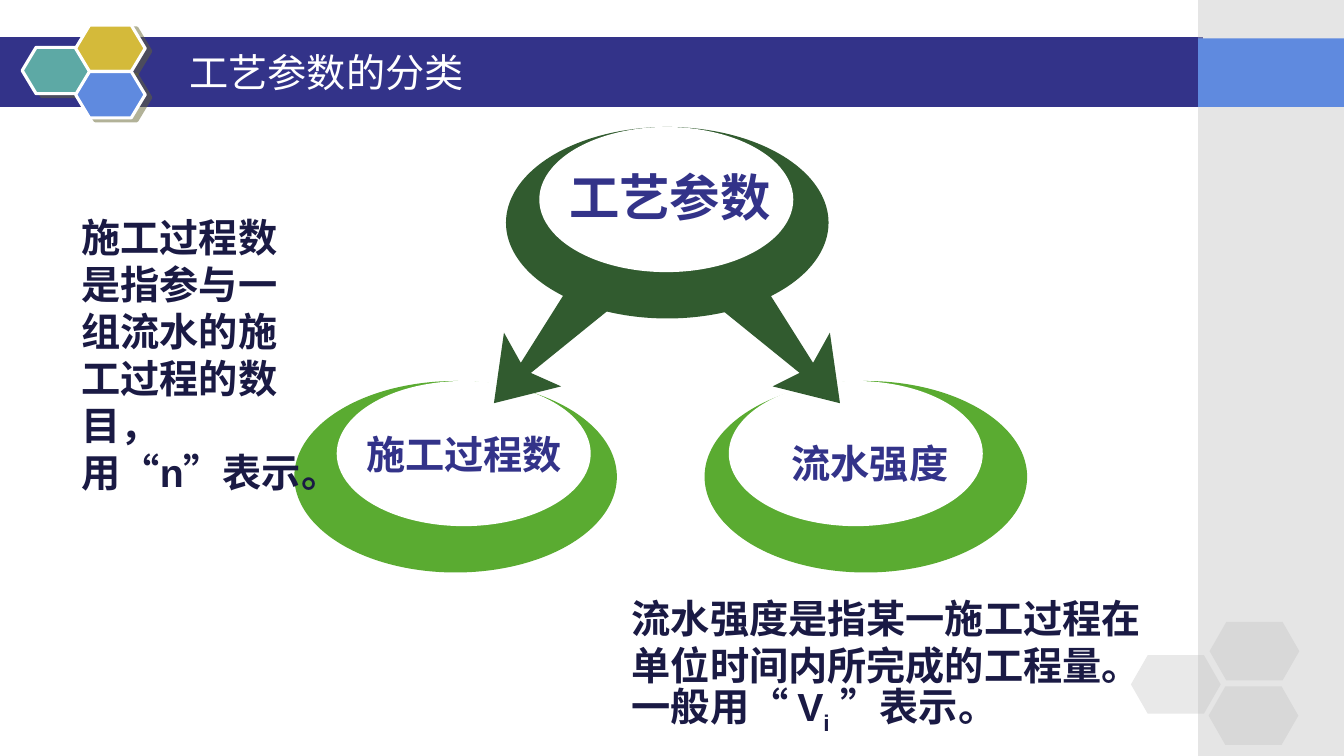
from lxml.etree import SubElement
from pptx import Presentation
from pptx.dml.color import RGBColor
from pptx.enum.shapes import MSO_SHAPE
from pptx.enum.text import MSO_ANCHOR, MSO_AUTO_SIZE, PP_ALIGN
from pptx.oxml import parse_xml
from pptx.oxml.ns import nsdecls, qn
from pptx.util import Emu, Pt

COLS, ROWS = 400, 225
CELL = 30480

WHITE = RGBColor(0xFF, 0xFF, 0xFF)
NAVY = RGBColor(0x33, 0x33, 0x89)
INK = RGBColor(0x1A, 0x1A, 0x44)
BLUE = RGBColor(0x5F, 0x8A, 0xDF)
TEAL = RGBColor(0x5D, 0xA9, 0xA5)
GOLD = RGBColor(0xD4, 0xBA, 0x3A)
GRAY = RGBColor(0xC0, 0xC0, 0xC0)
GREEN = RGBColor(0x5A, 0xAB, 0x31)
FOREST = RGBColor(0x31, 0x5B, 0x2F)

CJK = "Noto Sans CJK SC"
TITLE = {"size": Pt(28), "bold": False, "name": CJK}
LABEL = {"size": Pt(28), "bold": True, "name": CJK}
ROOT_LABEL = {**LABEL, "size": Pt(36)}
NOTE = {**LABEL, "name": "Arial"}

RING = (96, 57)
RING_HOLE = (75.6, 43.2)
MIRROR = 396.9
ARROW = [(213.3, 62.1), (242.1, 107.7), (246.9, 99.3), (250.2, 120),
         (230.1, 114.6), (238.5, 110.7), (196.5, 77.1)]

SHADOW = (f'<a:effectLst {nsdecls("a")}><a:outerShdw dist="57150" dir="1620000">'
          '<a:srgbClr val="666633"><a:alpha val="50000"/></a:srgbClr>'
          '</a:outerShdw></a:effectLst>')


def cells(*values):
    return [Emu(round(v * CELL)) for v in values]


def paint(sp, color, opacity=100):
    sp.shadow.inherit = False
    sp.fill.solid()
    sp.fill.fore_color.rgb = color
    sp.line.fill.background()
    if opacity < 100:
        clr = sp.fill._xPr.find(f'{qn("a:solidFill")}/{qn("a:srgbClr")}')
        SubElement(clr, qn("a:alpha"), val=str(opacity * 1000))
    return sp


def add_preset(s, kind, box, color, opacity=100):
    return paint(s.shapes.add_shape(kind, *cells(*box)), color, opacity)


def add_outline(s, points, color):
    builder = s.shapes.build_freeform(*points[0], scale=CELL)
    builder.add_line_segments(points[1:], close=True)
    return paint(builder.convert_to_shape(), color)


def add_hexagon(s, box, color, adj, opacity=100):
    sp = add_preset(s, MSO_SHAPE.HEXAGON, box, color, opacity)
    sp.adjustments[0] = adj
    return sp


def add_badge_hexagon(s, left, top, color):
    sp = add_hexagon(s, (left, top, 20.7, 13.8), color, 0.3)
    sp.line.color.rgb = WHITE
    sp.line.width = Pt(2.25)
    sp_pr = sp.element.spPr
    sp_pr.replace(sp_pr.find(qn("a:effectLst")), parse_xml(SHADOW))


def add_run(p, text, fmt, color, baseline=0):
    r = p.add_run()
    r.text = text
    for name, value in fmt.items():
        setattr(r.font, name, value)
    r.font.color.rgb = color
    r_pr = r._r.get_or_add_rPr()
    SubElement(r_pr, qn("a:ea"), typeface=CJK)
    if baseline:
        r_pr.set("baseline", str(baseline * 1000))


def add_text(s, box, runs, fmt, color, align=PP_ALIGN.LEFT, wrap=True):
    tf = s.shapes.add_textbox(*cells(*box)).text_frame
    tf.word_wrap = wrap
    p = tf.paragraphs[0]
    p.alignment = align
    p.line_spacing = Pt(1.2 * fmt["size"].pt)
    for text, baseline in runs:
        add_run(p, text, fmt, color, baseline)


def add_label(s, box, text, fmt=LABEL, wrap=True):
    add_text(s, box, [(text, 0)], fmt, NAVY, PP_ALIGN.CENTER, wrap)


def add_ring(s, left, top, hole_left, color, arrows=()):
    add_preset(s, MSO_SHAPE.OVAL, (left, top, *RING), color)
    for points in arrows:
        add_outline(s, points, color)
    add_preset(s, MSO_SHAPE.OVAL, (hole_left, top, *RING_HOLE), WHITE)


def add_backdrop(s):
    add_outline(s, [(0, 11.4), (358, 11.4), (358, 31.8), (0, 32)], NAVY)
    strip = COLS - 356.6
    add_preset(s, MSO_SHAPE.RECTANGLE, (356.6, 0, strip, ROWS), GRAY, 40)
    add_preset(s, MSO_SHAPE.RECTANGLE, (356.6, 11.4, strip, 20.4), BLUE)
    for left, top, color in [(6.6, 14.1, TEAL), (22.5, 7.5, GOLD), (22.5, 21.3, BLUE)]:
        add_badge_hexagon(s, left, top, color)
    for left, top in [(336.6, 195), (360, 185.1), (359.7, 204.3)]:
        add_hexagon(s, (left, top, 26.7, 17.4), GRAY, 0.286, 35)


def place_title(s, box, text):
    sp = s.shapes.title
    s.shapes.element.append(sp.element)
    for name, value in zip(("left", "top", "width", "height"), cells(*box)):
        setattr(sp, name, value)
    tf = sp.text_frame
    tf.auto_size = MSO_AUTO_SIZE.NONE
    tf.vertical_anchor = MSO_ANCHOR.MIDDLE
    p = tf.paragraphs[0]
    p.alignment = PP_ALIGN.LEFT
    add_run(p, text, TITLE, WHITE)


def main():
    prs = Presentation()
    prs.slide_width, prs.slide_height = cells(COLS, ROWS)
    s = prs.slides.add_slide(prs.slide_layouts[5])

    add_backdrop(s)
    place_title(s, (53.4, 12.6, 290.1, 17.4), "工艺参数的分类")

    add_ring(s, 87.6, 113.4, 100.2, GREEN)
    add_label(s, (103.5, 126.6, 69.3, 17.1), "施工过程数")
    add_ring(s, 209.7, 113.4, 216.9, GREEN)
    add_label(s, (227.4, 129.3, 63, 17.1), "流水强度")

    mirrored = [(MIRROR - x, y) for x, y in ARROW]
    add_ring(s, 150.6, 37.8, 160.5, FOREST, (ARROW, mirrored))
    add_label(s, (166.2, 48, 66.3, 21.3), "工艺参数", ROOT_LABEL, wrap=False)

    add_text(s, (21.3, 62.1, 72.6, 87.9),
             [("施工过程数是指参与一组流水的施工过程的数目，用“n”表示。", 0)], NOTE, INK)
    add_text(s, (185.1, 175.5, 158.4, 45.3),
             [("流水强度是指某一施工过程在单位时间内所完成的工程量。一般用“ V", 0),
              ("i", -25), (" ”表示。", 0)], NOTE, INK)

    prs.save("out.pptx")


if __name__ == "__main__":
    main()
